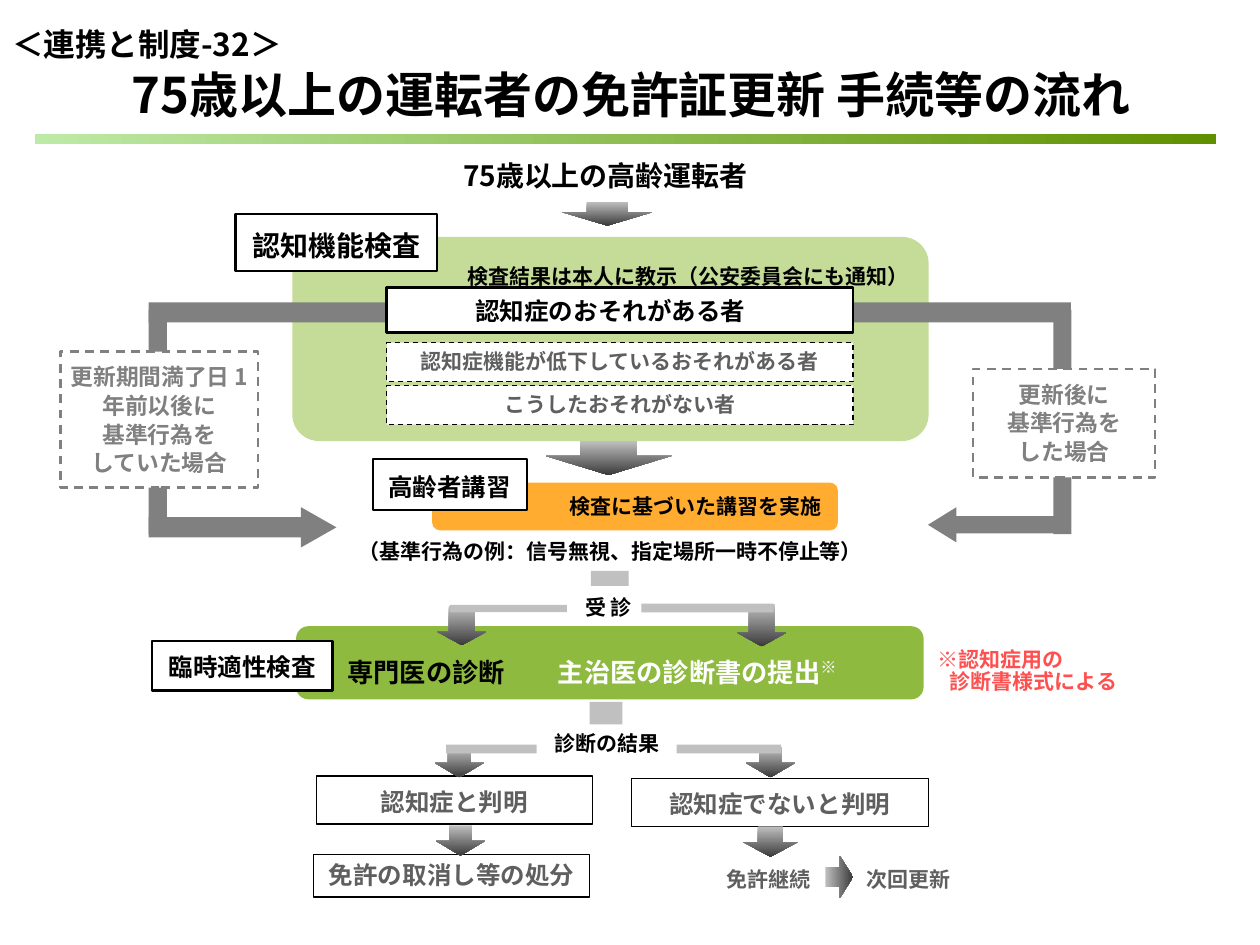
from lxml.etree import SubElement
from pptx import Presentation
from pptx.dml.color import RGBColor
from pptx.enum.dml import MSO_LINE
from pptx.enum.shapes import MSO_SHAPE
from pptx.enum.text import MSO_ANCHOR, MSO_AUTO_SIZE, PP_ALIGN
from pptx.oxml.ns import qn
from pptx.util import Inches, Pt

FONT = "Noto Sans CJK JP"
COLS, ROWS = 100, 75
C = {
    "black": "000000", "white": "FFFFFF", "text": "5F5F5F", "gray": "808080",
    "light": "C0C0C0", "dark": "3B3B3B", "panel": "C4DC98", "green": "8EBA40",
    "orange": "FFAC31", "red": "FF5050", "mint": "BDEAA6", "olive": "609000",
}
HEAD = (0.46, 0.48)


def cells(n):
    return int(Inches(10) * n / COLS)


def rgb(name):
    return RGBColor.from_string(C[name])


def frame(box, x, y, w, h):
    return [cells(n) for n in (box[0] + x, box[1] + y, w, h)]


def gradient(shape, start, end, angle):
    shape.fill.gradient()
    shape.fill.gradient_angle = angle
    for stop, name in zip(shape.fill.gradient_stops, (start, end)):
        stop.color.rgb = rgb(name)


def add_run(p, text, size, color):
    r = p.add_run()
    r.text = text
    r.font.size = Pt(size)
    r.font.bold = True
    r.font.name = FONT
    r.font.color.rgb = rgb(color)
    SubElement(r._r.get_or_add_rPr(), qn("a:ea"), typeface=FONT)
    return r


def write(shape, lines, size, color="black", align=PP_ALIGN.CENTER, ls=1.0,
          anchor=MSO_ANCHOR.TOP, ins=(1, 0.5, 1, 0.5)):
    tf = shape.text_frame
    tf.word_wrap = True
    tf.auto_size = MSO_AUTO_SIZE.NONE
    tf.vertical_anchor = anchor
    tf.margin_left, tf.margin_top, tf.margin_right, tf.margin_bottom = map(cells, ins)
    for i, line in enumerate(lines):
        p = tf.add_paragraph() if i else tf.paragraphs[0]
        p.alignment = align
        p.line_spacing = ls
        p.space_before = Pt(0)
        add_run(p, line, size, color)
    return tf


def block(s, box, at, kind=MSO_SHAPE.RECTANGLE, fill=None, line=None, width=0.75,
          dash=False, adj=()):
    sp = s.shapes.add_shape(kind, *frame(box, *at))
    sp.shadow.inherit = False
    if fill:
        sp.fill.solid()
        sp.fill.fore_color.rgb = rgb(fill)
    else:
        sp.fill.background()
    if line:
        sp.line.color.rgb = rgb(line)
        sp.line.width = Pt(width)
        if dash:
            sp.line.dash_style = MSO_LINE.DASH
    else:
        sp.line.fill.background()
    for i, value in enumerate(adj):
        sp.adjustments[i] = value
    return sp


def label(s, box, at, text, size, **style):
    tb = s.shapes.add_textbox(*frame(box, *at))
    write(tb, text, size, **style)
    return tb


def arrow(s, box, at, adj=HEAD, kind=MSO_SHAPE.DOWN_ARROW, angle=270):
    gradient(block(s, box, at, kind, adj=adj), "light", "dark", angle)


def tag(s, box, at, text, size, ls):
    write(block(s, box, at, fill="white", line="black", width=1.25), [text], size, ls=ls)


def header(s, box):
    title = s.shapes.title
    title.left, title.top, title.width, title.height = frame(box, 3.3, 4.6, 93.6, 5.7)
    write(title, ["75歳以上の運転者の免許証更新 手続等の流れ"], 28)
    rule = block(s, box, (2.8, 10.6, 93.7, 0.8))
    gradient(rule, "mint", "olive", 0)
    tb = label(s, box, (0, 0, 25.6, 5.6), ["＜連携と制度-32＞"], 18,
               align=PP_ALIGN.LEFT, ls=1.5)
    tb.text_frame.word_wrap = False


def screening(s, box):
    sp = block(s, box, (0, 0, *box[2:]), MSO_SHAPE.ROUNDED_RECTANGLE, "panel", adj=[0.13])
    write(sp, ["検査結果は本人に教示（公安委員会にも通知）"], 12,
          align=PP_ALIGN.LEFT, ins=(13.3, 1.5, 0, 0))
    tag(s, box, (-4.5, -1.8, 16, 4.5), "認知機能検査", 16, 1.25)
    label(s, box, (3.8, -7, 42.1, 4.3), ["75歳以上の高齢運転者"], 16,
          anchor=MSO_ANCHOR.MIDDLE)
    arrow(s, box, (21.4, -2.8, 7.2, 1.9), (0.45, 0.56))


def screening_results(s, box):
    sp = block(s, box, (0, 0, box[2], 3.6), fill="white", line="black", width=1.5)
    write(sp, ["認知症のおそれがある者"], 14, ls=1.1, ins=(0.5, 0.5, 2, 0.5))
    others = ["認知症機能が低下しているおそれがある者", "こうしたおそれがない者"]
    for i, text in enumerate(others):
        sp = block(s, box, (0, 4.4 + 3.4 * i, box[2], 3.1), fill="white",
                   line="black", dash=True)
        write(sp, [text], 12, "text")


def route(s, box, post_x, note_at, lines, kind, head_at, adj):
    block(s, box, (0, 0, box[2], 1.6), fill="gray")
    block(s, box, (post_x, 0.6, 1.45, 17.8), fill="gray")
    block(s, box, head_at, kind, "gray", adj=adj)
    note = block(s, box, note_at, fill="white", line="gray", width=1.25, dash=True)
    write(note, lines, 13, "gray", ls=1.05, ins=(0.8,) * 4)


def lecture(s, box):
    arrow(s, box, (9, -3.3, 10, 2.7), (0.45, 0.56))
    sp = block(s, box, (0, 0, *box[2:]), MSO_SHAPE.ROUNDED_RECTANGLE, "orange")
    write(sp, ["検査に基づいた講習を実施"], 12, align=PP_ALIGN.RIGHT,
          anchor=MSO_ANCHOR.MIDDLE, ins=(0, 0, 1.1, 0))
    tag(s, box, (-4.7, -1.9, 12.2, 4.1), "高齢者講習", 14, 1.25)
    label(s, box, (-8.6, 4, 45.5, 3.2), ["（基準行為の例：信号無視、指定場所一時不停止等）"],
          12, ls=0.8, ins=(0.8,) * 4)


def examination(s, box):
    sp = block(s, box, (0, 0, *box[2:]), MSO_SHAPE.ROUNDED_RECTANGLE, "green")
    tf = write(sp, ["専門医の診断\t"], 15, align=PP_ALIGN.LEFT, ls=1.5,
               anchor=MSO_ANCHOR.MIDDLE, ins=(3.8, 0, 0, 0))
    p = tf.paragraphs[0]
    add_run(p, "主治医の診断書の提出", 15, "white")
    mark = add_run(p, "※", 16, "white")
    mark.font._element.set("baseline", "30000")
    tabs = SubElement(p._p.get_or_add_pPr(), qn("a:tabLst"))
    SubElement(tabs, qn("a:tab"), pos=str(cells(16.7)), algn="l")
    tag(s, box, (-11.4, 1.2, 14.3, 3.9), "臨時適性検査", 14, 1.15)
    note = label(s, box, (50.1, 1, 20.7, 5.2), ["※認知症用の", "診断書様式による"], 12,
                 color="red", align=PP_ALIGN.LEFT, ls=0.9, ins=(0.8,) * 4)
    note.text_frame.paragraphs[1]._p.get_or_add_pPr().set("marL", str(cells(1)))
    label(s, box, (18.9, -2.9, 11.8, 3.2), ["受 診"], 12, ls=0.8, ins=(0.8,) * 4)
    arrow(s, box, (11.2, -1.6, 3.9, 3.1), (0.52, 0.34))
    arrow(s, box, (35, -1.8, 3.9, 3.4), (0.52, 0.32))
    for bar in ((12.2, -1.7, 9.3, 0.6), (27.4, -1.8, 10.5, 0.7), (23.4, -4.4, 3, 1.2)):
        block(s, box, bar, fill="light")


def outcomes(s, box):
    for at, text, ls in (
        ((0.2, 4, 21.9, 3.8), "認知症と判明", 1.15),
        ((25.2, 4.2, 23.6, 3.8), "認知症でないと判明", 1.15),
        ((0, 10.2, 21.9, 3.4), "免許の取消し等の処分", 1),
    ):
        write(block(s, box, at, line="black"), [text], 14, "text", ls=ls)
    for x, w, text in ((30.3, 11.6, "免許継続"), (41.9, 10.6, "次回更新")):
        label(s, box, (x, 10.4, w, 3.3), [text], 12, color="text", ls=1.15)
    for x, y, w in ((9.6, 1.7, 3.9), (34.3, 1.7, 3.9), (9.7, 7.9, 3.9), (34.1, 8, 4.3)):
        arrow(s, box, (x, y, w, 2.4))
    arrow(s, box, (40.6, 10.3, 2.2, 3.4), kind=MSO_SHAPE.RIGHT_ARROW, angle=0)
    block(s, box, (10.5, 1.5, 26.6, 0.7), fill="light")
    block(s, box, (21.9, -1.9, 2.6, 1.8), fill="light")
    sp = block(s, box, (17.7, 0, 11.1, 3.2), fill="white")
    write(sp, ["診断の結果"], 12, ls=0.8, ins=(0.8,) * 4)


def main():
    prs = Presentation()
    prs.slide_width, prs.slide_height = cells(COLS), cells(ROWS)
    s = prs.slides.add_slide(prs.slide_layouts[5])
    header(s, (0, 0, COLS, 12))
    screening(s, (23.2, 18.8, 50.5, 16.2))
    route(s, (11.8, 24, 22.4, 21), 0, (-7, 3.9, 15.7, 10.8),
          ["更新期間満了日 1年前以後に", "基準行為を", "していた場合"],
          MSO_SHAPE.RIGHT_ARROW, (0, 16.25, 14.9, 3.2), (0.5, 0.88))
    route(s, (61.8, 24, 23.2, 21), 21.8, (15.4, 5.3, 14.5, 8.6),
          ["更新後に", "基準行為を", "した場合"],
          MSO_SHAPE.LEFT_ARROW, (11.85, 16.25, 11.3, 2.8), (0.49, 0.81))
    screening_results(s, (30.7, 22.8, 37, 14))
    lecture(s, (34.3, 38.3, 32.2, 3.8))
    examination(s, (23.5, 49.7, 49.8, 5.8))
    outcomes(s, (24.9, 57.6, 52.5, 14))
    prs.save("out.pptx")


if __name__ == "__main__":
    main()
